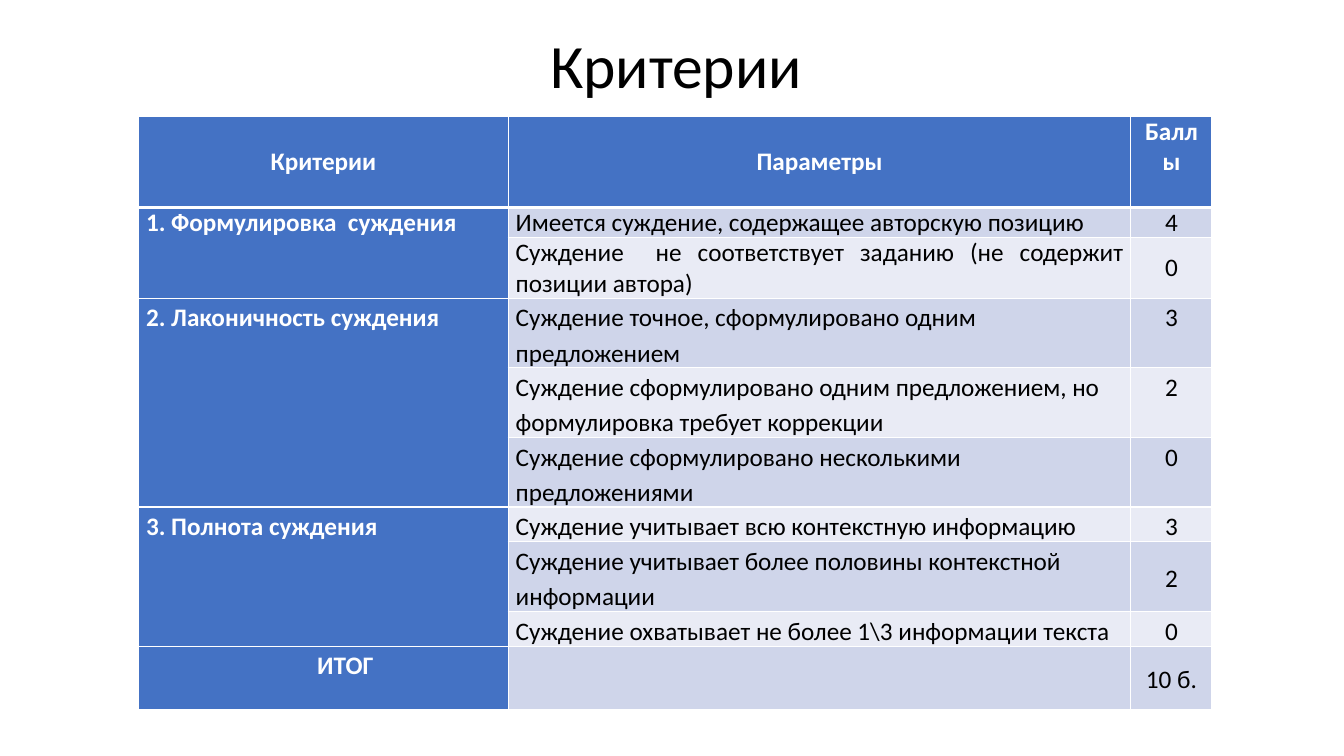
import pptx
import pptx.dml.color
import pptx.enum.text
import pptx.oxml
import pptx.oxml.ns
import pptx.util

Pt = pptx.util.Pt
ALIGN = pptx.enum.text.PP_ALIGN
ANCHOR = pptx.enum.text.MSO_ANCHOR

WHITE, BLACK, BLUE = "FFFFFF", "000000", "4472C4"
BANDS = ("CFD5EA", "E9EBF5")
LEFT, CENTER, JUSTIFY = ALIGN.LEFT, ALIGN.CENTER, ALIGN.JUSTIFY
TOP, MIDDLE = ANCHOR.TOP, ANCHOR.MIDDLE

HEADERS = ("Критерии", "Параметры", "Баллы")
# Each criterion: name, line spacing, alignment, levels (text, points, anchor)
CRITERIA = [
    ("1. Формулировка  суждения", 1.0, JUSTIFY, [
        ("Имеется суждение, содержащее авторскую позицию", "4", MIDDLE),
        ("Суждение  не соответствует заданию (не содержит позиции автора)",
         "0", MIDDLE),
    ]),
    ("2. Лаконичность суждения", 1.15, LEFT, [
        ("Суждение точное, сформулировано одним предложением", "3", TOP),
        ("Суждение сформулировано одним предложением, но формулировка "
         "требует коррекции", "2", TOP),
        ("Суждение сформулировано несколькими предложениями", "0", TOP),
    ]),
    ("3. Полнота суждения", 1.15, LEFT, [
        ("Суждение учитывает всю контекстную информацию", "3", MIDDLE),
        ("Суждение учитывает более половины контекстной информации",
         "2", MIDDLE),
        ("Суждение охватывает не более 1\\3 информации текста", "0", MIDDLE),
    ]),
]
COLUMN_WIDTHS = (264.1, 444.7, 58)
ROW_HEIGHTS = (41, 20.5, 41, 46.5, 45.5, 45.5, 22.5, 45.5, 22.5, 45.5)


def rgb(color):
    return pptx.dml.color.RGBColor.from_string(color)


def apply(target, values):
    for name, value in values.items():
        setattr(target, name, value)


def write(tf, text, size, color, align, spacing=1.0, bold=False):
    p = tf.paragraphs[0]
    apply(p, {"alignment": align, "line_spacing": spacing})
    r = p.add_run()
    r.text = text
    apply(r.font, {"name": "Calibri", "size": Pt(size), "bold": bold})
    r.font.color.rgb = rgb(color)


def add_borders(cell, widths):
    tc_pr = cell._tc.get_or_add_tcPr()
    for side, width in zip("LRTB", widths):
        tc_pr.append(pptx.oxml.parse_xml(
            f'<a:ln{side} {pptx.oxml.ns.nsdecls("a")} w="{Pt(width)}">'
            f'<a:solidFill><a:srgbClr val="{WHITE}"/></a:solidFill>'
            f'</a:ln{side}>'))


def style_cell(cell, fill, top=1, bottom=1):
    add_borders(cell, (1, 1, top, bottom))
    cell.fill.solid()
    cell.fill.fore_color.rgb = rgb(fill)
    apply(cell, {"margin_left": Pt(5.3), "margin_right": Pt(5.3),
                 "margin_top": 0, "margin_bottom": 0})


def fill_cell(cell, text, color, align, spacing=1.0, bold=False, anchor=TOP):
    cell.vertical_anchor = anchor
    write(cell.text_frame, text, 18, color, align, spacing, bold)


def add_title(s, left, top, width, height):
    tf = s.shapes.add_textbox(Pt(left), Pt(top), Pt(width), Pt(height)).text_frame
    apply(tf, {"word_wrap": True, "vertical_anchor": MIDDLE})
    write(tf, "Критерии ", 44, BLACK, CENTER, 0.9)


def add_criteria_table(s, left, top):
    table = s.shapes.add_table(
        len(ROW_HEIGHTS), len(COLUMN_WIDTHS), Pt(left), Pt(top),
        Pt(sum(COLUMN_WIDTHS)), Pt(sum(ROW_HEIGHTS))).table
    for column, width in zip(table.columns, COLUMN_WIDTHS):
        column.width = Pt(width)
    for row, height in zip(table.rows, ROW_HEIGHTS):
        row.height = Pt(height)

    # Fills and borders
    for i, row in enumerate(table.rows):
        for j, cell in enumerate(row.cells):
            fill = BLUE if i == 0 or j == 0 else BANDS[(i - 1) % 2]
            style_cell(cell, fill, 3 if i == 1 else 1, 3 if i == 0 else 1)

    # Header row
    for j, header in enumerate(HEADERS):
        fill_cell(table.cell(0, j), header, WHITE, CENTER, bold=True,
                  anchor=MIDDLE)
    table.cell(0, 2).margin_bottom = Pt(22)

    # Criteria, each spanning its levels
    i = 1
    for name, spacing, align, levels in CRITERIA:
        first = table.cell(i, 0)
        first.merge(table.cell(i + len(levels) - 1, 0))
        fill_cell(first, name, WHITE, LEFT, spacing, True)
        for text, points, anchor in levels:
            fill_cell(table.cell(i, 1), text, BLACK, align, spacing)
            fill_cell(table.cell(i, 2), points, BLACK, CENTER, spacing,
                      anchor=anchor)
            i += 1

    # Total row
    total = table.cell(i, 0)
    total.margin_left = Pt(40.6)
    fill_cell(total, "ИТОГ ", WHITE, CENTER, 1.15, True)
    fill_cell(table.cell(i, 2), "10 б.", BLACK, CENTER, 1.15, anchor=MIDDLE)


def main():
    prs = pptx.Presentation()
    apply(prs, {"slide_width": Pt(960), "slide_height": Pt(540)})
    s = prs.slides.add_slide(prs.slide_layouts[6])
    add_title(s, 74, 12, 828, 74)
    add_criteria_table(s, 99, 83)
    prs.save("out.pptx")


if __name__ == "__main__":
    main()
